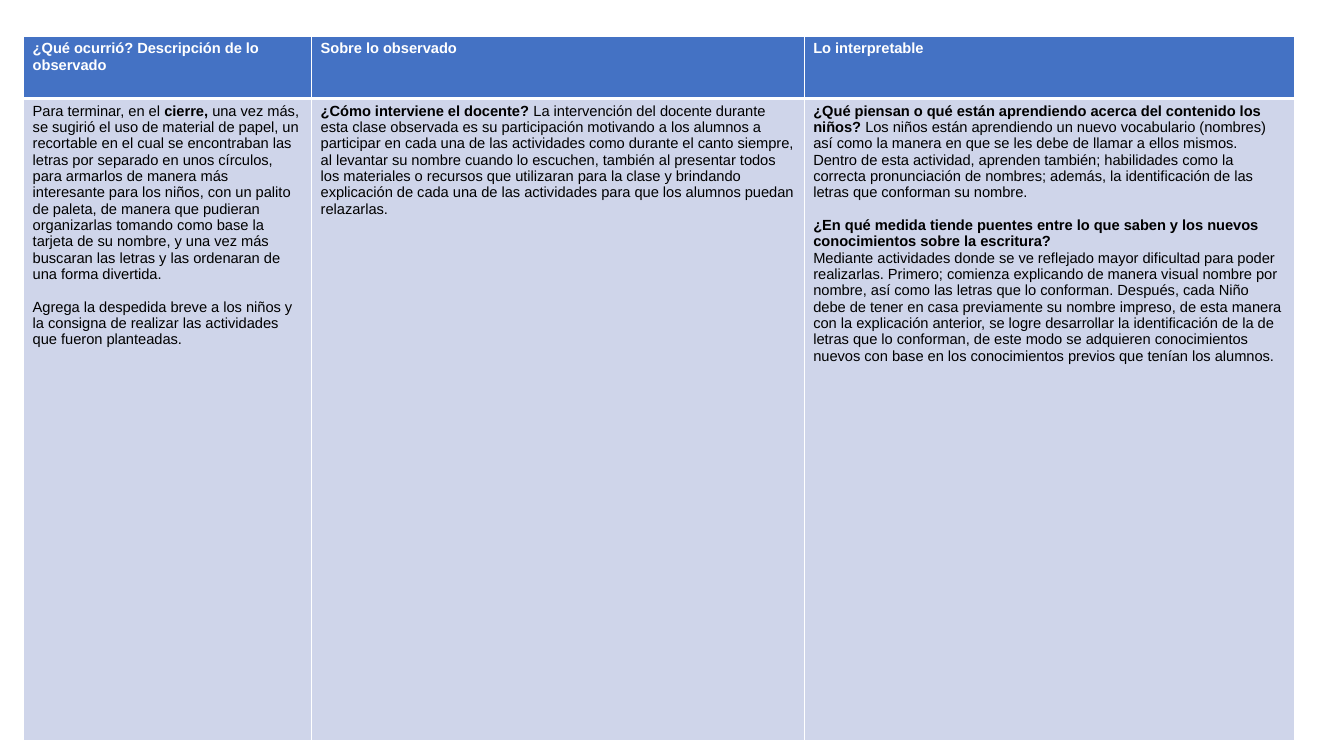
import pptx
import pptx.dml.color
import pptx.oxml
import pptx.oxml.ns
import pptx.util
from dataclasses import dataclass

Pt = pptx.util.Pt


@dataclass(frozen=True)
class Theme:
    font: str = "Arial"
    size: float = 10.5
    header_fill: str = "4472C4"
    header_text: str = "FFFFFF"
    body_fill: str = "CFD5EA"
    body_text: str = "000000"
    border: str = "FFFFFF"
    thin: float = 1
    thick: float = 3
    margin_x: float = 6.6
    margin_y: float = 3.3
    paragraph_gap: float = 11.7


THEME = Theme()
COLUMN_WIDTHS = (205.7, 351.9, 350.4)
ROW_HEIGHTS = (44.6, 458.9)

# Each cell is a list of (gap before, runs); each run is (text, bold).
HEADERS = [
    [(False, [(title, True)])]
    for title in (
        "¿Qué ocurrió? Descripción de lo observado",
        "Sobre lo observado",
        "Lo interpretable",
    )
]
OBSERVATIONS = [
    [
        (False, [
            ("Para terminar, en el ", False),
            ("cierre, ", True),
            ("una vez más, se sugirió el uso de material de papel, un recortable en el cual "
             "se encontraban las letras por separado en unos círculos, para armarlos de manera "
             "más interesante para los niños, con un palito de paleta, de manera que pudieran "
             "organizarlas tomando como base la tarjeta de su nombre, y una vez más buscaran "
             "las letras y las ordenaran de una forma divertida.", False),
        ]),
        (True, [
            ("Agrega la despedida breve a los niños y la consigna de realizar las actividades "
             "que fueron planteadas.", False),
        ]),
    ],
    [
        (False, [
            ("¿Cómo interviene el docente? ", True),
            ("La intervención del docente durante esta clase observada es su participación "
             "motivando a los alumnos a participar en cada una de las actividades como durante "
             "el canto siempre, al levantar su nombre cuando lo escuchen, también al presentar "
             "todos los materiales o recursos que utilizaran para la clase y brindando "
             "explicación de cada una de las actividades para que los alumnos puedan "
             "relazarlas.", False),
        ]),
    ],
    [
        (False, [
            ("¿Qué piensan o qué están aprendiendo acerca del contenido los niños? ", True),
            ("Los niños están aprendiendo un nuevo vocabulario (nombres) así como la manera en "
             "que se les debe de llamar a ellos mismos. Dentro de esta actividad, aprenden "
             "también; habilidades como la correcta pronunciación de nombres; además, la "
             "identificación de las letras que conforman su nombre.", False),
        ]),
        (True, [
            ("¿En qué medida tiende puentes entre lo que saben y los nuevos conocimientos "
             "sobre la escritura?", True),
        ]),
        (False, [
            ("Mediante actividades donde se ve reflejado mayor dificultad para poder "
             "realizarlas. Primero; comienza explicando de manera visual nombre por nombre, "
             "así como las letras que lo conforman. Después, cada Niño debe de tener en casa "
             "previamente su nombre impreso, de esta manera con la explicación anterior, se "
             "logre desarrollar la identificación de la de letras que lo conforman, de este "
             "modo se adquieren conocimientos nuevos con base en los conocimientos previos que "
             "tenían los alumnos.", False),
        ]),
    ],
]


def rgb(value):
    return pptx.dml.color.RGBColor.from_string(value)


def set_borders(cell, widths):
    """Draw the left, right, top and bottom borders, given in that order."""
    properties = cell._tc.get_or_add_tcPr()
    for index, (side, width) in enumerate(zip("LRTB", widths)):
        line = pptx.oxml.parse_xml(
            f'<a:ln{side} {pptx.oxml.ns.nsdecls("a")} w="{Pt(width)}">'
            f'<a:solidFill><a:srgbClr val="{THEME.border}"/></a:solidFill></a:ln{side}>'
        )
        properties.insert(index, line)


def write_cell(cell, paragraphs, fill, color):
    cell.fill.solid()
    cell.fill.fore_color.rgb = rgb(fill)
    cell.margin_left = cell.margin_right = Pt(THEME.margin_x)
    cell.margin_top = cell.margin_bottom = Pt(THEME.margin_y)
    text_frame = cell.text_frame
    for index, (gap, runs) in enumerate(paragraphs):
        paragraph = text_frame.add_paragraph() if index else text_frame.paragraphs[0]
        paragraph.space_before = Pt(THEME.paragraph_gap if gap else 0)
        for text, bold in runs:
            run = paragraph.add_run()
            run.text = text
            run.font.name = THEME.font
            run.font.size = Pt(THEME.size)
            run.font.bold = bold
            run.font.color.rgb = rgb(color)


def add_observation_table(slide, left, top, width, height):
    frame = slide.shapes.add_table(
        len(ROW_HEIGHTS), len(COLUMN_WIDTHS), Pt(left), Pt(top), Pt(width), Pt(height)
    )
    table = frame.table
    for column, column_width in zip(table.columns, COLUMN_WIDTHS):
        column.width = Pt(column_width)
    for row, row_height in zip(table.rows, ROW_HEIGHTS):
        row.height = Pt(row_height)

    thin, thick = THEME.thin, THEME.thick
    # Header row, with a thick rule beneath it
    for cell, paragraphs in zip(table.rows[0].cells, HEADERS):
        write_cell(cell, paragraphs, THEME.header_fill, THEME.header_text)
        set_borders(cell, (thin, thin, thin, thick))
    # Observations
    for cell, paragraphs in zip(table.rows[1].cells, OBSERVATIONS):
        write_cell(cell, paragraphs, THEME.body_fill, THEME.body_text)
        set_borders(cell, (thin, thin, thick, thin))


def main():
    presentation = pptx.Presentation()
    presentation.slide_width = Pt(960)
    presentation.slide_height = Pt(540)
    slide = presentation.slides.add_slide(presentation.slide_layouts[6])
    add_observation_table(slide, 16.8, 25.7, sum(COLUMN_WIDTHS), sum(ROW_HEIGHTS))
    presentation.save("out.pptx")


if __name__ == "__main__":
    main()
